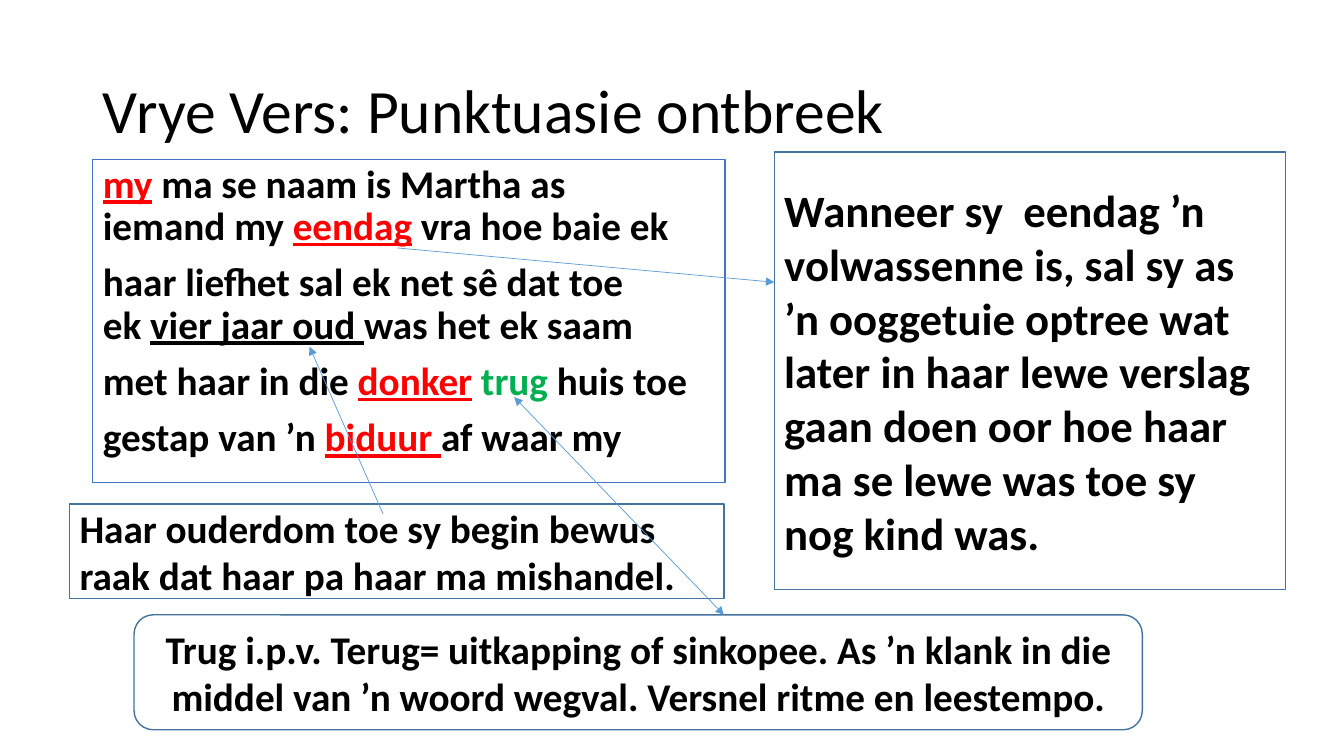
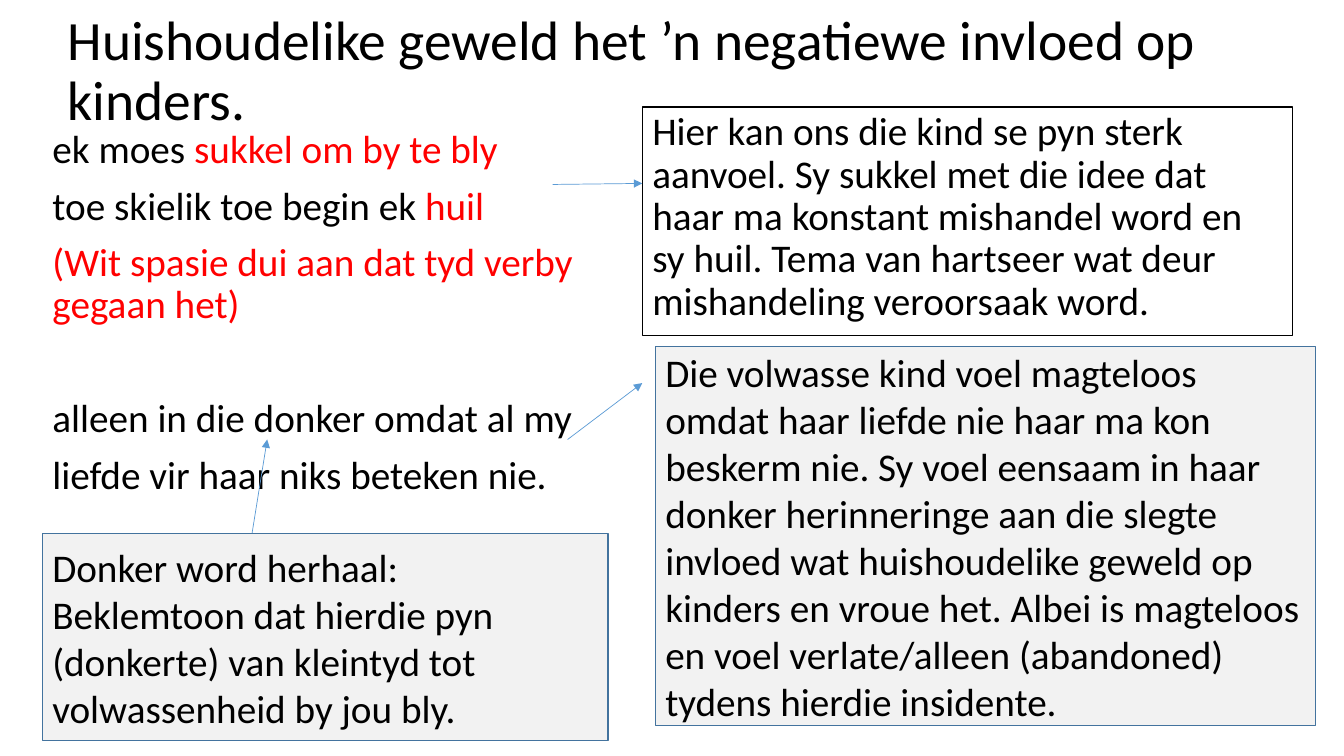
from lxml.etree import SubElement
from pptx import Presentation
from pptx.dml.color import RGBColor
from pptx.enum.shapes import MSO_CONNECTOR, MSO_SHAPE
from pptx.enum.text import MSO_ANCHOR, MSO_AUTO_SIZE, PP_ALIGN
from pptx.oxml.ns import qn
from pptx.util import Inches, Pt

COLORS = {
    "text": "000000",
    "accent": "FF0000",
    "syncope": "00B050",
    "white": "FFFFFF",
    "shade": "F2F2F2",
    "verse_border": "4472C4",
    "note_border": "43739E",
    "arrow": "5B9BD5",
}
FONT = "Calibri"
BODY_SIZE = 28
LINE_SPACING = 0.9
VERSE_GAP = 10
STANZA_GAP = 51


def rgb(name):
    """Return the named palette colour."""
    return RGBColor.from_string(COLORS[name])


def style_master(master):
    """Left-align titles and remove bullets from first-level body text."""
    styles = master.element.find(qn("p:txStyles"))
    title_level = styles.find(qn("p:titleStyle")).find(qn("a:lvl1pPr"))
    title_level.set("algn", "l")
    body_level = styles.find(qn("p:bodyStyle")).find(qn("a:lvl1pPr"))
    body_level.set("marL", "0")
    body_level.set("indent", "0")
    body_level.find(qn("a:defRPr")).set("sz", str(BODY_SIZE * 100))
    bullet = body_level.find(qn("a:buChar"))
    bullet.addprevious(bullet.makeelement(qn("a:buNone")))
    body_level.remove(bullet)


def place(shape, box):
    """Move and size a shape to left, top, width and height in inches."""
    shape.left, shape.top, shape.width, shape.height = map(Inches, box)


def paint(shape, fill, border):
    """Give a shape a plain fill and a thin border."""
    shape.fill.solid()
    shape.fill.fore_color.rgb = rgb(fill)
    shape.line.color.rgb = rgb(border)
    shape.line.width = Pt(1)


def set_frame(frame, anchor):
    """Wrap text at a fixed size and anchor it vertically."""
    frame.word_wrap = True
    frame.auto_size = MSO_AUTO_SIZE.NONE
    frame.vertical_anchor = anchor


def format_run(run, size=BODY_SIZE, color="text", bold=False, underline=False):
    """Apply the deck font and the given emphasis to a run."""
    run.font.name = FONT
    run.font.size = Pt(size)
    run.font.color.rgb = rgb(color)
    run.font.bold = bold
    run.font.underline = underline


def add_title(slide, text, box, size):
    """Fill and place the title placeholder."""
    title = slide.shapes.title
    place(title, box)
    set_frame(title.text_frame, MSO_ANCHOR.MIDDLE)
    title.text_frame.text = text
    paragraph = title.text_frame.paragraphs[0]
    paragraph.line_spacing = LINE_SPACING
    format_run(paragraph.runs[0], size)


def add_phrase(paragraph, text, bold, color="text", underline=False):
    """Append a styled phrase, turning newlines into line breaks."""
    for index, line in enumerate(text.split("\n")):
        if index:
            paragraph.add_line_break()
        run = paragraph.add_run()
        run.text = line
        format_run(run, color=color, bold=bold, underline=underline)


def add_verses(placeholder, box, verses, bold=False):
    """Write verses, each a list of styled phrases, into a body placeholder."""
    place(placeholder, box)
    frame = placeholder.text_frame
    set_frame(frame, MSO_ANCHOR.TOP)
    for index, verse in enumerate(verses):
        paragraph = frame.add_paragraph() if index else frame.paragraphs[0]
        paragraph.line_spacing = LINE_SPACING
        paragraph.space_before = Pt(VERSE_GAP)
        for text, *style in verse:
            add_phrase(paragraph, text, bold, *style)


def add_note(slide, text, box, fill="white", size=BODY_SIZE, bold=False,
             outline=MSO_SHAPE.RECTANGLE, align=PP_ALIGN.LEFT):
    """Add a bordered explanatory note."""
    note = slide.shapes.add_shape(outline, *map(Inches, box))
    note.shadow.inherit = False
    paint(note, fill, "note_border")
    set_frame(note.text_frame, MSO_ANCHOR.MIDDLE)
    note.text_frame.text = text
    paragraph = note.text_frame.paragraphs[0]
    paragraph.alignment = align
    format_run(paragraph.runs[0], size, bold=bold)


def add_arrow(slide, start, end, ends=("tailEnd",)):
    """Draw a thin arrow between two points."""
    arrow = slide.shapes.add_connector(
        MSO_CONNECTOR.STRAIGHT, *map(Inches, (*start, *end)))
    arrow.line.color.rgb = rgb("arrow")
    arrow.line.width = Pt(0.5)
    properties = arrow.element.spPr
    for end_name in ends:
        SubElement(properties.find(qn("a:ln")), qn("a:" + end_name), type="triangle")
    SubElement(properties, qn("a:effectLst"))


def build_punctuation(deck):
    """Build the slide on missing punctuation."""
    slide = deck.slides.add_slide(deck.slide_layouts.get_by_name("Title and Content"))
    add_title(slide, "Vrye Vers: Punktuasie ontbreek", (0.92, 0.4, 11.5, 1.45), 44)
    poem = slide.placeholders[1]
    paint(poem, "white", "verse_border")
    add_verses(poem, (0.92, 1.58, 6.27, 3.21), [
        [("my", "accent", True), (" ma se naam is Martha as\niemand my ",),
         ("eendag", "accent", True), (" vra hoe baie ek",)],
        [("haar liefhet sal ek net sê dat toe\nek ",),
         ("vier jaar oud ", "text", True), ("was het ek saam",)],
        [("met haar in die ",), ("donker", "accent", True), (" ",),
         ("trug", "syncope"), (" huis toe",)],
        [("gestap van ’n ",), ("biduur ", "accent", True), ("af waar my",)],
    ], bold=True)
    add_note(slide, "Wanneer sy  eendag ’n volwassenne is, sal sy as ’n ooggetuie "
             "optree wat later in haar lewe verslag gaan doen oor hoe haar ma se "
             "lewe was toe sy nog kind was.",
             (7.68, 1.51, 5.07, 4.34), size=32, bold=True)
    add_arrow(slide, (3.94, 2.46), (7.68, 2.8))
    add_note(slide, "Haar ouderdom toe sy begin bewus raak dat haar pa haar ma "
             "mishandel.", (0.69, 5, 6.49, 0.94), bold=True)
    add_note(slide, "Trug i.p.v. Terug= uitkapping of sinkopee. As ’n klank in die "
             "middel van ’n woord wegval. Versnel ritme en leestempo.",
             (1.33, 6.1, 10, 1.14), bold=True,
             outline=MSO_SHAPE.ROUNDED_RECTANGLE, align=PP_ALIGN.CENTER)
    add_arrow(slide, (3.8, 5.1), (3.07, 3.44))
    add_arrow(slide, (7.18, 6.1), (5.1, 3.94), ("headEnd", "tailEnd"))


def build_violence(deck):
    """Build the slide on the effect of domestic violence."""
    slide = deck.slides.add_slide(deck.slide_layouts.get_by_name("Two Content"))
    add_title(slide, "Huishoudelike geweld het ’n negatiewe invloed op kinders.",
              (0.57, 0.2, 12.25, 1.04), 39.6)
    poem, pain = slide.placeholders[1], slide.placeholders[2]
    add_verses(poem, (0.42, 1.24, 5.8, 3.93), [
        [("ek moes ",), ("sukkel om by te bly", "accent")],
        [("toe skielik toe begin ek ",), ("huil", "accent")],
        [("(Wit spasie dui aan dat tyd verby gegaan het)", "accent")],
        [("alleen in die donker omdat al my",)],
        [("liefde vir haar niks beteken nie.",)],
    ])
    poem.text_frame.paragraphs[3].space_before = Pt(STANZA_GAP)
    paint(pain, "white", "text")
    add_verses(pain, (6.37, 1.06, 6.45, 2.27), [
        [("Hier kan ons die kind se pyn sterk aanvoel. Sy sukkel met die idee dat "
          "haar ma konstant mishandel word en sy huil. Tema van hartseer wat deur "
          "mishandeling veroorsaak word.",)],
    ])
    add_note(slide, "Die volwasse kind voel magteloos omdat haar liefde nie haar ma "
             "kon beskerm nie. Sy voel eensaam in haar donker herinneringe aan die "
             "slegte invloed wat huishoudelike geweld op kinders en vroue het. Albei "
             "is magteloos en voel verlate/alleen (abandoned) tydens hierdie "
             "insidente.", (6.5, 3.44, 6.55, 3.76), "shade")
    add_note(slide, "Donker word herhaal: Beklemtoon dat hierdie pyn (donkerte) van "
             "kleintyd tot volwassenheid by jou bly.",
             (0.42, 5.29, 5.61, 2.06), "shade")
    add_arrow(slide, (5.48, 1.83), (6.37, 1.82))
    add_arrow(slide, (5.63, 4.36), (6.37, 3.8))
    add_arrow(slide, (2.5, 5.29), (2.65, 4.36))


def main():
    """Create and save the presentation."""
    deck = Presentation()
    deck.slide_width, deck.slide_height = Inches(13.33), Inches(7.5)
    style_master(deck.slide_master)
    build_punctuation(deck)
    build_violence(deck)
    deck.save("out.pptx")


if __name__ == "__main__":
    main()
